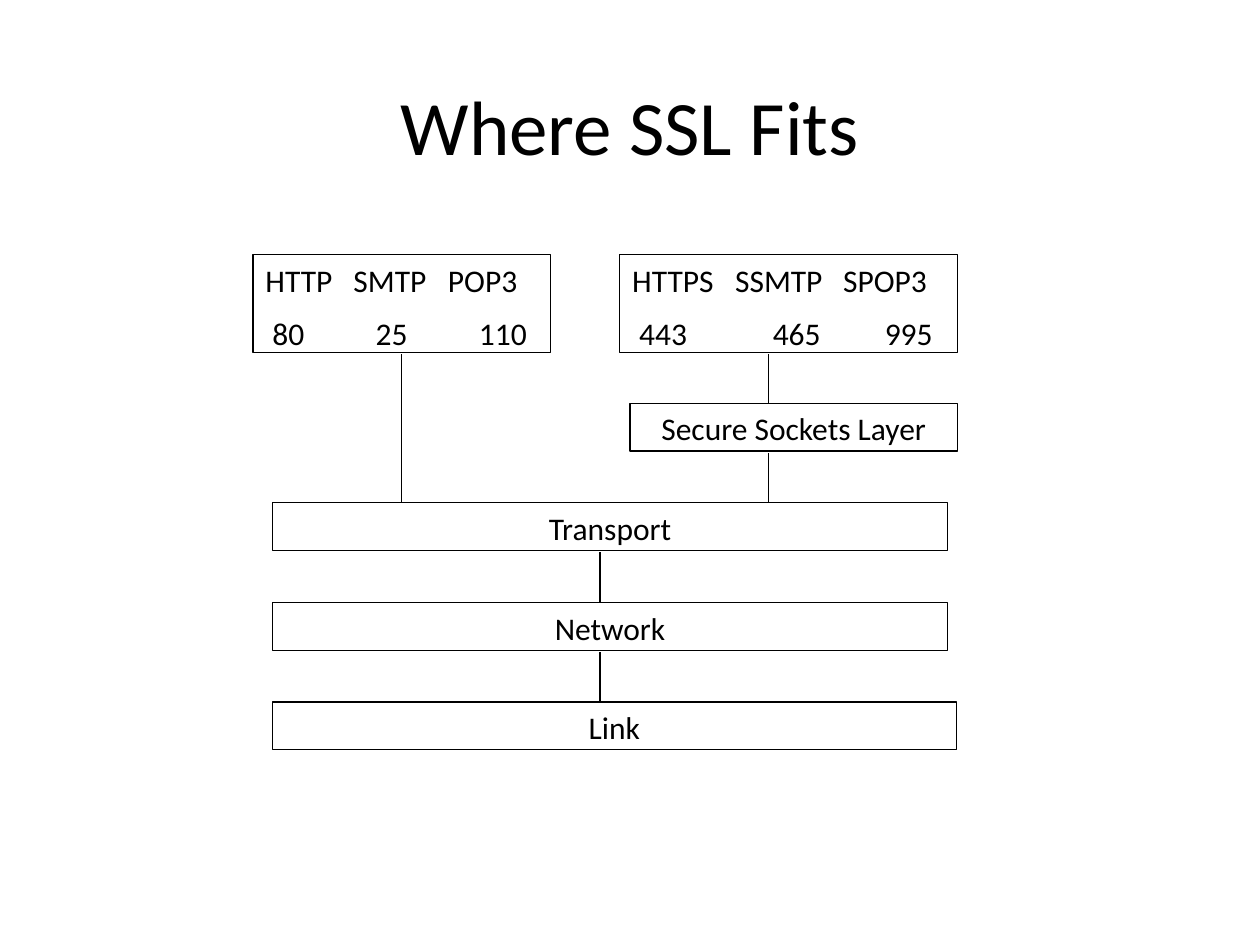
from lxml.etree import SubElement
from pptx import Presentation
from pptx.dml.color import RGBColor
from pptx.enum.shapes import MSO_CONNECTOR as CONN, MSO_SHAPE as SHAPE
from pptx.enum.text import MSO_ANCHOR as ANCHOR, PP_ALIGN as ALIGN
from pptx.oxml.ns import qn
from pptx.util import Pt

BLACK = RGBColor(0, 0, 0)


def write(tf, lines, size=18, align=ALIGN.CENTER, anchor=ANCHOR.TOP, gap=9, tabs=()):
    """Write one paragraph per line; tabs holds the tab stops of each line."""
    tf.word_wrap = True
    tf.vertical_anchor = anchor
    for i, text in enumerate(lines):
        p = tf.add_paragraph() if i else tf.paragraphs[0]
        p.alignment = align
        if i:
            p.space_before = Pt(gap)
        r = p.add_run()
        r.text = text
        r.font.name = Style.font
        r.font.size = Pt(size)
        r.font.color.rgb = BLACK
        if tabs:
            tab_list = SubElement(p._p.get_or_add_pPr(), qn("a:tabLst"))
            for stop in tabs[i]:
                SubElement(tab_list, qn("a:tab"), pos=str(Pt(stop)), algn="l")


class Style:
    font = "Calibri"
    line_width = Pt(0.75)

    def __init__(self, s):
        self.s = s

    def title(self, text, x, y, w, h):
        box = self.s.shapes.add_textbox(Pt(x), Pt(y), Pt(w), Pt(h))
        write(box.text_frame, [text], size=44, anchor=ANCHOR.MIDDLE)

    def box(self, lines, x, y, w, h, **fmt):
        sp = self.s.shapes.add_shape(SHAPE.RECTANGLE, Pt(x), Pt(y), Pt(w), Pt(h))
        sp.shadow.inherit = False
        sp.fill.background()
        sp.line.color.rgb = BLACK
        sp.line.width = self.line_width
        write(sp.text_frame, lines, **fmt)

    def drop(self, x, top, bottom):
        """Draw a vertical line."""
        c = self.s.shapes.add_connector(CONN.STRAIGHT, Pt(x), Pt(top), Pt(x), Pt(bottom))
        c.line.color.rgb = BLACK
        c.line.width = self.line_width
        SubElement(c._element.spPr, qn("a:effectLst"))


def main():
    prs = Presentation()
    prs.slide_width, prs.slide_height = Pt(720), Pt(540)
    d = Style(prs.slides.add_slide(prs.slide_layouts[6]))
    d.title("Where SSL Fits", 54, 31.5, 612, 79)

    app_top, app_h = 145.4, 56.2
    app_bottom = app_top + app_h + 0.8
    layer_h, pitch = 27.4, 56.9
    ssl, transport, network, link = (230.4 + pitch * i for i in range(4))

    protocols = [
        (144.6, 170, ["HTTP\tSMTP\tPOP3", "\t80\t25\t110"],
         [(50.3, 104.3), (4, 63, 122)]),
        (354.2, 193, ["HTTPS\tSSMTP\tSPOP3", "\t443\t465\t995"],
         [(58.8, 120.5), (4, 80.3, 144.3)]),
    ]
    for x, w, lines, tabs in protocols:
        d.box(lines, x, app_top, w, app_h, align=ALIGN.LEFT, tabs=tabs)

    layers = [
        ("Secure Sockets Layer", 360, ssl, 187.2),
        ("Transport", 155.6, transport, 386),
        ("Network", 155.6, network, 386),
        ("Link", 155.6, link, 391),
    ]
    for name, x, y, w in layers:
        d.box([name], x, y, w, layer_h)

    plain_x, secure_x, stack_x = 229.6, 439.2, 342.9
    d.drop(plain_x, app_bottom, transport)
    d.drop(secure_x, app_bottom, ssl)
    for x, upper in [(secure_x, ssl), (stack_x, transport), (stack_x, network)]:
        d.drop(x, upper + layer_h + 1, upper + pitch)

    prs.save("out.pptx")


if __name__ == "__main__":
    main()
